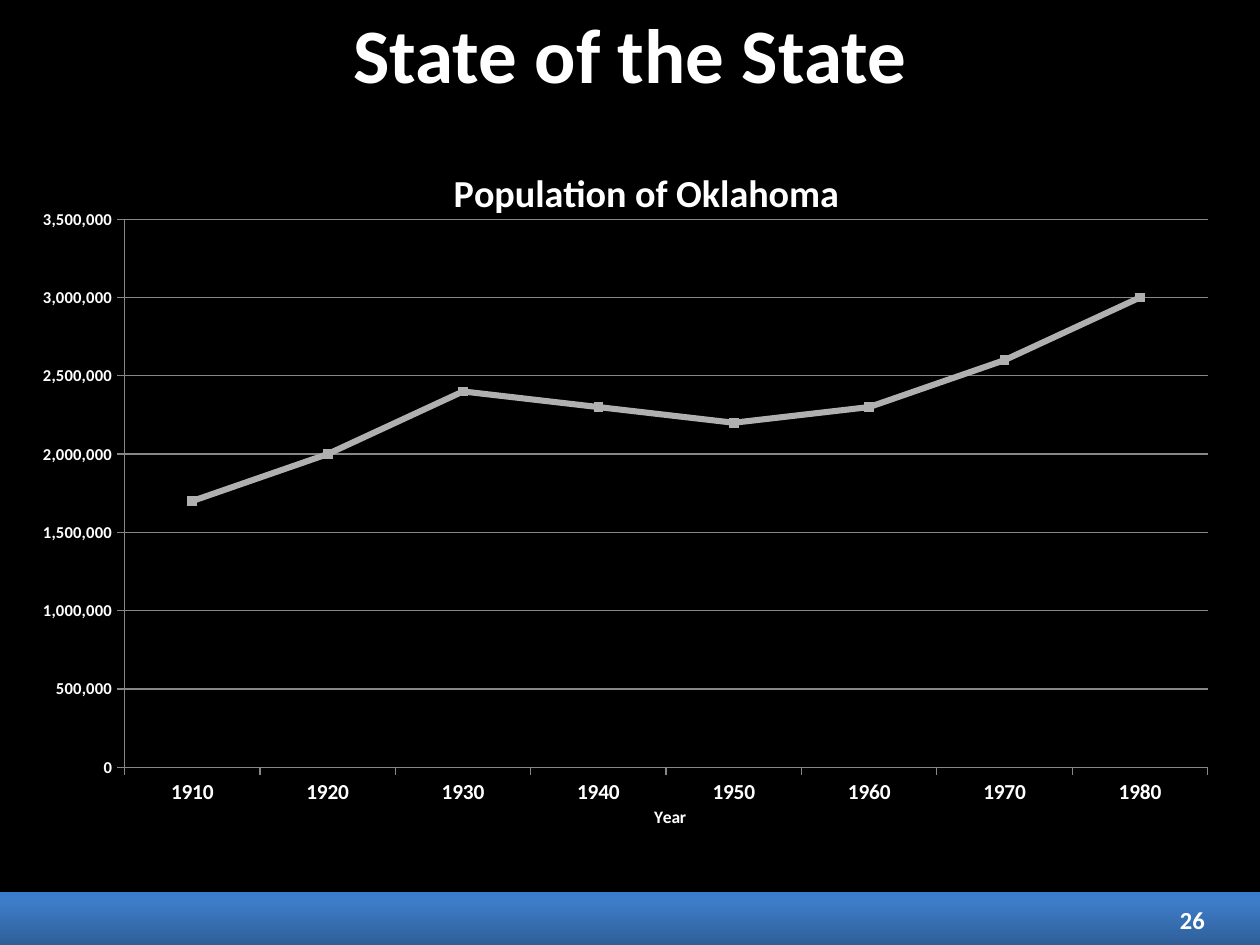
import copy
import pptx
import pptx.chart.data
import pptx.dml.color
import pptx.enum.chart
import pptx.enum.shapes
import pptx.enum.text
import pptx.oxml
import pptx.oxml.ns
import pptx.util

Inches = pptx.util.Inches
RGBColor = pptx.dml.color.RGBColor
BLACK = RGBColor(0, 0, 0)
WHITE = RGBColor(255, 255, 255)
GRID = RGBColor(0x87, 0x87, 0x87)
LINE = RGBColor(0xB0, 0xB0, 0xB0)
BLUES = [
    (0, RGBColor(0x2F, 0x5F, 0x99)),
    (0.8, RGBColor(0x3D, 0x7C, 0xC7)),
    (1, RGBColor(0x3A, 0x7C, 0xCB)),
]
FONT = "Calibri"
YEARS = [str(year) for year in range(1910, 1990, 10)]
COUNTS = [1700000, 2000000, 2400000, 2300000, 2200000, 2300000, 2600000, 3000000]
PLOT = {"x": 0.069, "y": 0.152, "w": 0.924, "h": 0.759}
HEAD = {"x": 0.344, "y": 0.069}
FOOT = {"x": 0.518, "y": 0.96}


def set_font(font, size):
    font.name = FONT
    font.size = pptx.util.Pt(size)
    font.bold = True
    font.color.rgb = WHITE


def set_text(frame, text, size, align):
    frame.text = text
    frame.word_wrap = True
    frame.vertical_anchor = pptx.enum.text.MSO_ANCHOR.MIDDLE
    line = frame.paragraphs[0]
    line.alignment = align
    set_font(line.runs[0].font, size)


def add_title(slide, left, top, width, height):
    title = slide.shapes.title
    title.left, title.top, title.width, title.height = left, top, width, height
    set_text(title.text_frame, "State of the State", 44, pptx.enum.text.PP_ALIGN.CENTER)


def add_footer(slide, left, top, width, height):
    bar = slide.shapes.add_shape(
        pptx.enum.shapes.MSO_SHAPE.RECTANGLE, left, top, width, height)
    bar.shadow.inherit = False
    bar.line.fill.background()
    bar.fill.gradient()
    bar.fill.gradient_angle = 90
    stops = bar._element.spPr.find(".//" + pptx.oxml.ns.qn("a:gsLst"))
    stops.append(copy.deepcopy(stops[-1]))
    for stop, (place, color) in zip(bar.fill.gradient_stops, BLUES):
        stop.position = place
        stop.color.rgb = color
    box = slide.shapes.add_textbox(
        left + Inches(7.33), top + Inches(0.02), Inches(2.33), Inches(0.4))
    set_text(box.text_frame, "26", 14, pptx.enum.text.PP_ALIGN.RIGHT)


def set_place(part, index, place, target=""):
    for old in part.findall(pptx.oxml.ns.qn("c:layout")):
        part.remove(old)
    modes = "".join(f'<c:{key}Mode val="edge"/>' for key in "xy")
    sizes = "".join(f'<c:{key} val="{val}"/>' for key, val in place.items())
    part.insert(index, pptx.oxml.parse_xml(
        f'<c:layout {pptx.oxml.ns.nsdecls("c")}><c:manualLayout>'
        f'{target}{modes}{sizes}</c:manualLayout></c:layout>'))


def set_head(owner, text, size, place):
    frame = owner.text_frame
    frame.text = text
    set_font(frame.paragraphs[0].runs[0].font, size)
    set_place(owner._element, 1, place)


def add_graph(slide, left, top, width, height):
    data = pptx.chart.data.CategoryChartData(number_format="#,##0")
    data.categories = YEARS
    data.add_series("Series 1", COUNTS)
    chart = slide.shapes.add_chart(
        pptx.enum.chart.XL_CHART_TYPE.LINE_MARKERS,
        left, top, width, height, data).chart
    set_font(chart.font, 10)
    chart.has_legend = False
    set_head(chart.chart_title, "Population of Oklahoma", 21.8, HEAD)
    chart.chart_title.include_in_layout = False
    set_place(chart._chartSpace.chart.plotArea, 0, PLOT,
              '<c:layoutTarget val="inner"/>')
    years, counts = chart.category_axis, chart.value_axis
    for axis, size in ((years, 12.2), (counts, 9.5)):
        set_font(axis.tick_labels.font, size)
        axis.major_tick_mark = pptx.enum.chart.XL_TICK_MARK.OUTSIDE
        axis.minor_tick_mark = pptx.enum.chart.XL_TICK_MARK.NONE
        axis.format.line.color.rgb = GRID
        axis.format.line.width = pptx.util.Pt(0.75)
    set_head(years.axis_title, "Year", 10, FOOT)
    counts.minimum_scale = 0
    counts.maximum_scale = 3500000
    counts.major_unit = 500000
    counts.tick_labels.number_format = "#,##0"
    counts.tick_labels.number_format_is_linked = False
    counts.has_major_gridlines = True
    counts.major_gridlines.format.line.color.rgb = GRID
    counts.major_gridlines.format.line.width = pptx.util.Pt(0.75)
    chart.plots[0].vary_by_categories = False
    trend = chart.plots[0].series[0]
    trend.smooth = False
    trend.format.line.color.rgb = LINE
    trend.format.line.width = pptx.util.Pt(3.5)
    mark = trend.marker
    mark.style = pptx.enum.chart.XL_MARKER_STYLE.SQUARE
    mark.size = 5
    mark.format.fill.solid()
    mark.format.fill.fore_color.rgb = LINE
    mark.format.line.color.rgb = LINE


def main():
    deck = pptx.Presentation()
    deck.slide_width, deck.slide_height = Inches(10), Inches(7.5)
    slide = deck.slides.add_slide(deck.slide_layouts[5])
    slide.background.fill.solid()
    slide.background.fill.fore_color.rgb = BLACK
    add_footer(slide, Inches(0), Inches(7.08), Inches(10), Inches(0.42))
    add_title(slide, Inches(0), Inches(0), Inches(10), Inches(0.83))
    add_graph(slide, Inches(0.34), Inches(0.87), Inches(9.31), Inches(5.74))
    deck.save("out.pptx")


if __name__ == "__main__":
    main()
